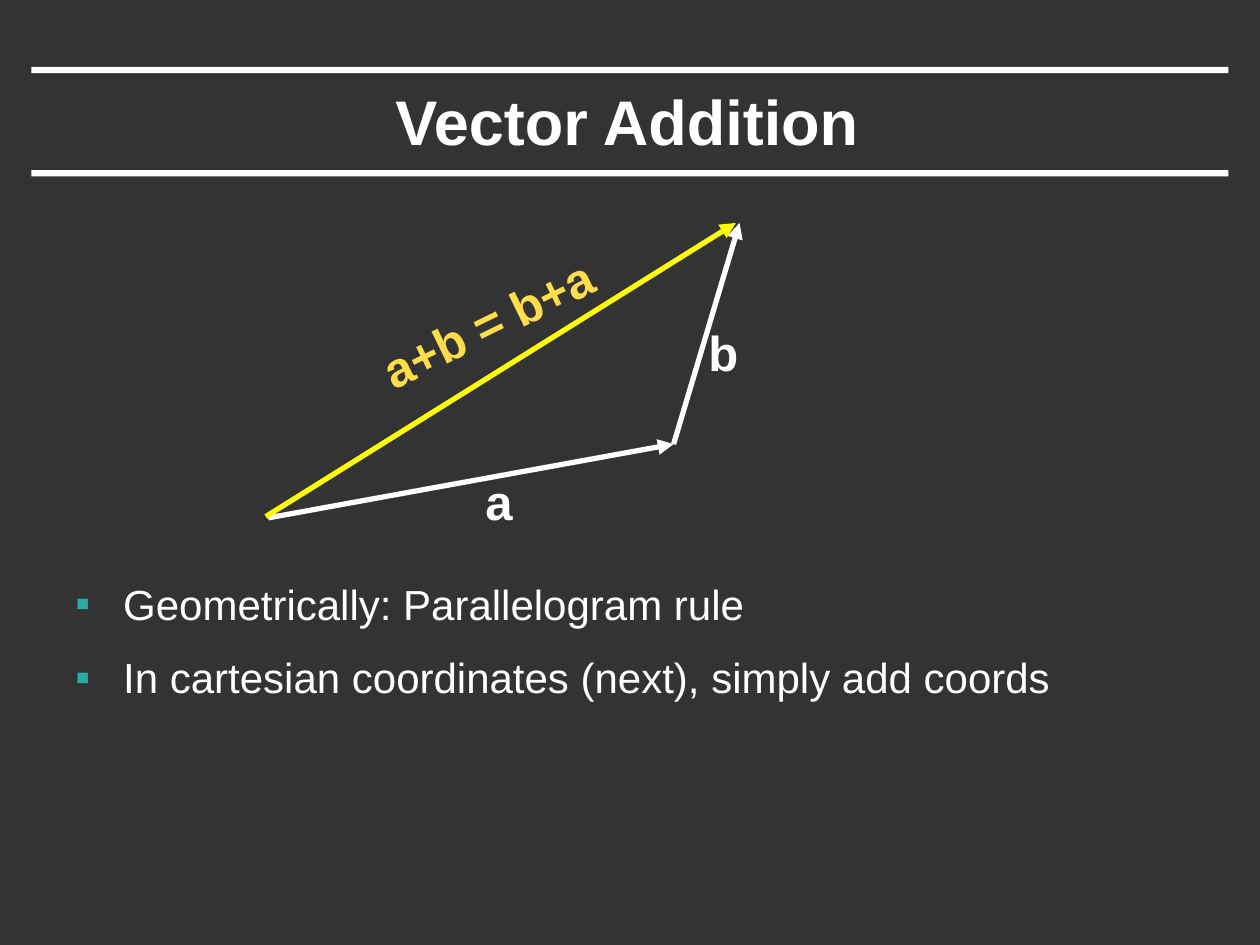
from lxml import etree
from pptx import Presentation, util as u
from pptx.dml.color import RGBColor
from pptx.enum import shapes, text
from pptx.oxml import ns

WIDTH, HEIGHT = 10, 7.5
BACKGROUND, WHITE, YELLOW, GOLD, TEAL = "333333", "FFFFFF", "FFFF00", "FFDD4B", "2AABA8"


def color(value):
    return RGBColor.from_string(value)


def inches(*lengths):
    return [u.Inches(length) for length in lengths]


def add_element(parent, tag, **attributes):
    return etree.SubElement(parent, ns.qn(tag), attributes)


def style(paragraph, size, value, bold=False):
    font = paragraph.font
    font.name, font.size, font.bold = "Arial", u.Pt(size), bold
    font.color.rgb = color(value)


def add_title(slide, box, wording):
    """Centred title between two white rules that span the box."""
    left, top, width, height = box
    rule = 0.05
    for rule_top in (top, top + height - rule):
        bar = slide.shapes.add_shape(
            shapes.MSO_SHAPE.RECTANGLE, *inches(left, rule_top, width, rule))
        bar.shadow.inherit = False
        bar.fill.solid()
        bar.fill.fore_color.rgb = color(WHITE)
        bar.line.fill.background()

    title = slide.shapes.title
    title.left, title.top, title.width, title.height = inches(
        left + 0.49, top + rule, width - 1.03, height - 0.12)
    frame = title.text_frame
    frame.text = wording
    frame.vertical_anchor = text.MSO_ANCHOR.MIDDLE
    frame.paragraphs[0].alignment = text.PP_ALIGN.CENTER
    style(frame.paragraphs[0], 36, WHITE, bold=True)


def add_vector(slide, start, end, value):
    vector = slide.shapes.add_connector(
        shapes.MSO_CONNECTOR.STRAIGHT, *inches(*start, *end))
    vector.line.width = u.Pt(3)
    vector.line.color.rgb = color(value)
    add_element(vector.line._get_or_add_ln(), "a:tailEnd", type="triangle")
    add_element(vector._element.spPr, "a:effectLst")


def add_label(slide, box, wording, value, rotation=0):
    label = slide.shapes.add_textbox(*inches(*box))
    label.rotation = rotation
    frame = label.text_frame
    frame.text = wording
    frame.word_wrap = False
    frame.paragraphs[0].alignment = text.PP_ALIGN.CENTER
    style(frame.paragraphs[0], 28, value, bold=True)


def add_diagram(slide, box):
    """Triangle of a, b and their sum, placed from the box's corner."""
    left, top, width, height = box
    origin = (left, top + height)
    corner = (left + 0.86 * width, top + 0.75 * height)
    tip = (left + width, top)

    add_vector(slide, origin, corner, WHITE)
    add_vector(slide, corner, tip, WHITE)
    add_vector(slide, (left - 0.02, top + height - 0.01), (left + width - 0.03, top), YELLOW)

    add_label(slide, (left + 1.62, top + 1.92, 0.42, 0.57), "a", WHITE)
    add_label(slide, (left + 3.39, top + 0.74, 0.44, 0.57), "b", WHITE)
    add_label(slide, (left + 0.56, top + 0.51, 2.36, 0.57), "a+b = b+a", GOLD, rotation=334)


def add_bullets(slide, box, lines):
    frame = slide.shapes.add_textbox(*inches(*box)).text_frame
    frame.word_wrap = True
    frame.text = "\n".join(lines)
    indent = u.Inches(0.38)
    for paragraph in frame.paragraphs:
        paragraph.space_after = u.Pt(13)
        properties = paragraph._p.get_or_add_pPr()
        properties.set("marL", str(indent))
        properties.set("indent", str(-indent))
        bullet_color = add_element(properties, "a:buClr")
        add_element(bullet_color, "a:srgbClr", val=TEAL)
        add_element(properties, "a:buFont", typeface="Arial")
        add_element(properties, "a:buChar", char="▪")
        style(paragraph, 24, WHITE)


def main():
    presentation = Presentation()
    presentation.slide_width, presentation.slide_height = inches(WIDTH, HEIGHT)
    slide = presentation.slides.add_slide(presentation.slide_layouts[5])
    slide.background.fill.solid()
    slide.background.fill.fore_color.rgb = color(BACKGROUND)

    margin = 0.025 * WIDTH
    add_title(slide, (margin, 0.53, WIDTH - 2 * margin, 0.87), "Vector Addition")
    add_diagram(slide, (2.13, 1.77, 3.74, 2.34))
    add_bullets(slide, (0.05 * WIDTH, 4.54, 0.9 * WIDTH, 0.35 * HEIGHT), [
        "Geometrically: Parallelogram rule",
        "In cartesian coordinates (next), simply add coords",
    ])
    presentation.save("out.pptx")


if __name__ == "__main__":
    main()
